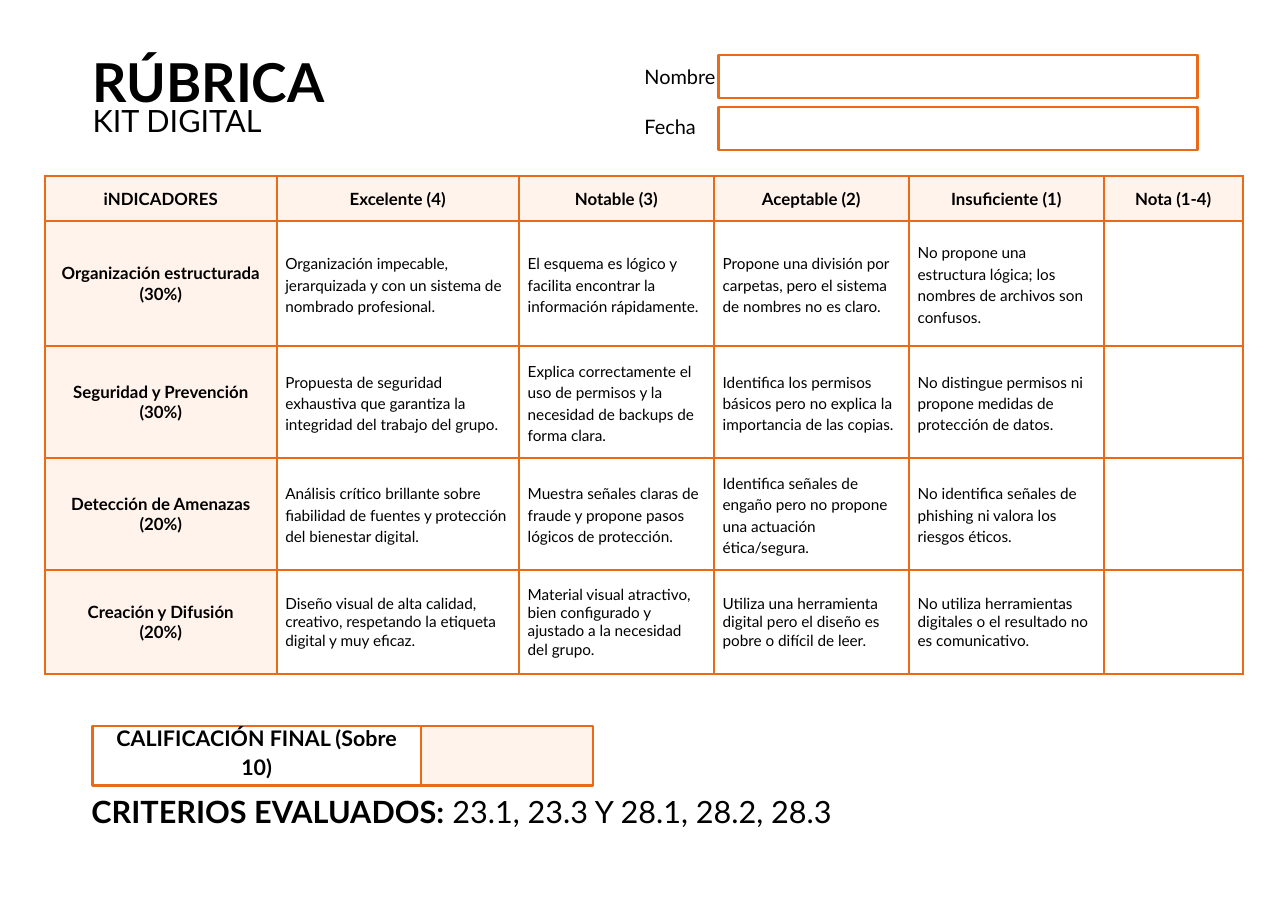
import dataclasses
import typing

import pptx
import pptx.dml.color
import pptx.enum.shapes
import pptx.enum.text
import pptx.oxml
import pptx.oxml.ns
import pptx.util

PX = 9144
ORANGE = "EB6A18"
CREAM = "FFF3EB"
WHITE = "FFFFFF"
BLACK = "000000"
FONT = "Lato"
BORDER_WIDTH = pptx.util.Pt(1.5)
MIDDLE = pptx.enum.text.MSO_ANCHOR.MIDDLE
TOP = pptx.enum.text.MSO_ANCHOR.TOP
LEFT = pptx.enum.text.PP_ALIGN.LEFT
CENTER = pptx.enum.text.PP_ALIGN.CENTER


class Box(typing.NamedTuple):
    left: int
    top: int
    width: int
    height: int

    def emu(self) -> list[int]:
        return [length * PX for length in self]


@dataclasses.dataclass(frozen=True)
class Style:
    size: int
    spacing: float
    bold: bool = False
    alignment: pptx.enum.text.PP_ALIGN = LEFT


@dataclasses.dataclass(frozen=True)
class Label:
    text: str
    box: Box
    style: Style
    inset: int = 0
    anchor: pptx.enum.text.MSO_ANCHOR = TOP


@dataclasses.dataclass(frozen=True)
class Field:
    box: Box
    fill: str = WHITE


@dataclasses.dataclass(frozen=True)
class Indicator:
    name: str
    weight: str
    levels: tuple[str, str, str, str]
    spacing: int = 14


HEADING = Style(11, 13.2, True, CENTER)
FIELD_NAME = Style(13, 18.2)
TITLE = Label("RÚBRICA", Box(84, 35, 431, 65), Style(35, 49, True))
CRITERIA = Label("CRITERIOS EVALUADOS:", Box(83, 714, 1004, 39), Style(20, 28))
CRITERIA_CODES = " 23.1, 23.3 Y 28.1, 28.2, 28.3"
LABELS = [
    Label("CALIFICACIÓN FINAL (Sobre 10)", Box(84, 650, 298, 62),
          Style(14, 19.6, True, CENTER), 6, MIDDLE),
    Label("KIT DIGITAL", Box(84, 87, 396, 39), Style(20, 28)),
    Label("Nombre", Box(585, 55, 66, 25), FIELD_NAME),
    Label("Fecha", Box(585, 100, 66, 25), FIELD_NAME),
]
FIELDS = [
    Field(Box(652, 50, 435, 39)),
    Field(Box(652, 97, 435, 39)),
    Field(Box(84, 659, 298, 54)),
    Field(Box(382, 659, 156, 54), CREAM),
]
TABLE_BOX = Box(41, 160, 1087, 452)
COLUMN_WIDTHS = [210, 220, 177, 177, 177, 126]
ROW_HEIGHTS = [41, 113, 102, 101, 95]
HEADERS = ["iNDICADORES", "Excelente (4)", "Notable (3)", "Aceptable (2)",
           "Insuficiente (1)", "Nota (1-4)"]
INDICATORS = [
    Indicator("Organización estructurada", "(30%)", (
        "Organización impecable, jerarquizada y con un sistema de nombrado profesional.",
        "El esquema es lógico y facilita encontrar la información rápidamente.",
        "Propone una división por carpetas, pero el sistema de nombres no es claro.",
        "No propone una estructura lógica; los nombres de archivos son confusos.")),
    Indicator("Seguridad y Prevención", "(30%)", (
        "Propuesta de seguridad exhaustiva que garantiza la integridad del trabajo del grupo.",
        "Explica correctamente el uso de permisos y la necesidad de backups de forma clara.",
        "Identifica los permisos básicos pero no explica la importancia de las copias.",
        "No distingue permisos ni propone medidas de protección de datos.")),
    Indicator("Detección de Amenazas", "(20%)", (
        "Análisis crítico brillante sobre fiabilidad de fuentes y protección del bienestar digital.",
        "Muestra señales claras de fraude y propone pasos lógicos de protección.",
        "Identifica señales de engaño pero no propone una actuación ética/segura.",
        "No identifica señales de phishing ni valora los riesgos éticos.")),
    Indicator("Creación y Difusión", "(20%)", (
        "Diseño visual de alta calidad, creativo, respetando la etiqueta digital y muy eficaz.",
        "Material visual atractivo, bien configurado y ajustado a la necesidad del grupo.",
        "Utiliza una herramienta digital pero el diseño es pobre o difícil de leer.",
        "No utiliza herramientas digitales o el resultado no es comunicativo."), 12),
]


def color(value: str) -> pptx.dml.color.RGBColor:
    return pptx.dml.color.RGBColor.from_string(value)


def write_text(frame, lines: typing.Sequence[str], style: Style) -> None:
    frame.text = "\n".join(lines)
    for paragraph in frame.paragraphs:
        paragraph.alignment = style.alignment
        paragraph.line_spacing = pptx.util.Pt(style.spacing)
        paragraph.font.name = FONT
        paragraph.font.size = pptx.util.Pt(style.size)
        paragraph.font.bold = style.bold
        paragraph.font.color.rgb = color(BLACK)


def format_label(shape, label: Label) -> None:
    shape.left, shape.top, shape.width, shape.height = label.box.emu()
    frame = shape.text_frame
    frame.word_wrap = True
    frame.auto_size = pptx.enum.text.MSO_AUTO_SIZE.NONE
    frame.vertical_anchor = label.anchor
    frame.margin_left = frame.margin_right = label.inset * PX
    frame.margin_top = frame.margin_bottom = label.inset * PX
    write_text(frame, [label.text], label.style)


def add_label(slide, label: Label):
    shape = slide.shapes.add_textbox(*label.box.emu())
    format_label(shape, label)
    return shape


def add_field(slide, field: Field) -> None:
    shape = slide.shapes.add_shape(
        pptx.enum.shapes.MSO_SHAPE.RECTANGLE, *field.box.emu())
    shape.shadow.inherit = False
    shape.fill.solid()
    shape.fill.fore_color.rgb = color(field.fill)
    shape.line.color.rgb = color(ORANGE)
    shape.line.width = BORDER_WIDTH


def format_cell(cell, fill: str) -> None:
    cell.vertical_anchor = MIDDLE
    cell.margin_left = cell.margin_right = 8 * PX
    cell.margin_top = cell.margin_bottom = 8 * PX
    cell.fill.solid()
    cell.fill.fore_color.rgb = color(fill)
    properties = cell._tc.get_or_add_tcPr()
    for position, side in enumerate(("lnL", "lnR", "lnT", "lnB")):
        properties.insert(position, pptx.oxml.parse_xml(
            f'<a:{side} {pptx.oxml.ns.nsdecls("a")} w="{BORDER_WIDTH}">'
            f'<a:solidFill><a:srgbClr val="{ORANGE}"/></a:solidFill></a:{side}>'))


def add_rubric(slide) -> None:
    table = slide.shapes.add_table(
        len(ROW_HEIGHTS), len(COLUMN_WIDTHS), *TABLE_BOX.emu()).table
    table.first_row = table.horz_banding = False
    for column, width in zip(table.columns, COLUMN_WIDTHS):
        column.width = width * PX
    for row, height in zip(table.rows, ROW_HEIGHTS):
        row.height = height * PX
    for row_index in range(len(ROW_HEIGHTS)):
        for column_index in range(len(COLUMN_WIDTHS)):
            is_heading = row_index == 0 or column_index == 0
            format_cell(table.cell(row_index, column_index),
                        CREAM if is_heading else WHITE)
    for column_index, header in enumerate(HEADERS):
        write_text(table.cell(0, column_index).text_frame, [header], HEADING)
    for row_index, indicator in enumerate(INDICATORS, 1):
        write_text(table.cell(row_index, 0).text_frame,
                   [indicator.name, indicator.weight], HEADING)
        for column_index, level in enumerate(indicator.levels, 1):
            write_text(table.cell(row_index, column_index).text_frame,
                       [level], Style(10, indicator.spacing))


def main() -> None:
    presentation = pptx.Presentation()
    presentation.slide_width = 1169 * PX
    presentation.slide_height = 826 * PX
    slide = presentation.slides.add_slide(presentation.slide_layouts[5])
    format_label(slide.shapes.title, TITLE)
    add_rubric(slide)
    for field in FIELDS:
        add_field(slide, field)
    for label in LABELS:
        add_label(slide, label)
    criteria = add_label(slide, CRITERIA).text_frame.paragraphs[0]
    criteria.runs[0].font.bold = True
    criteria.add_run().text = CRITERIA_CODES
    presentation.save("out.pptx")


if __name__ == "__main__":
    main()
